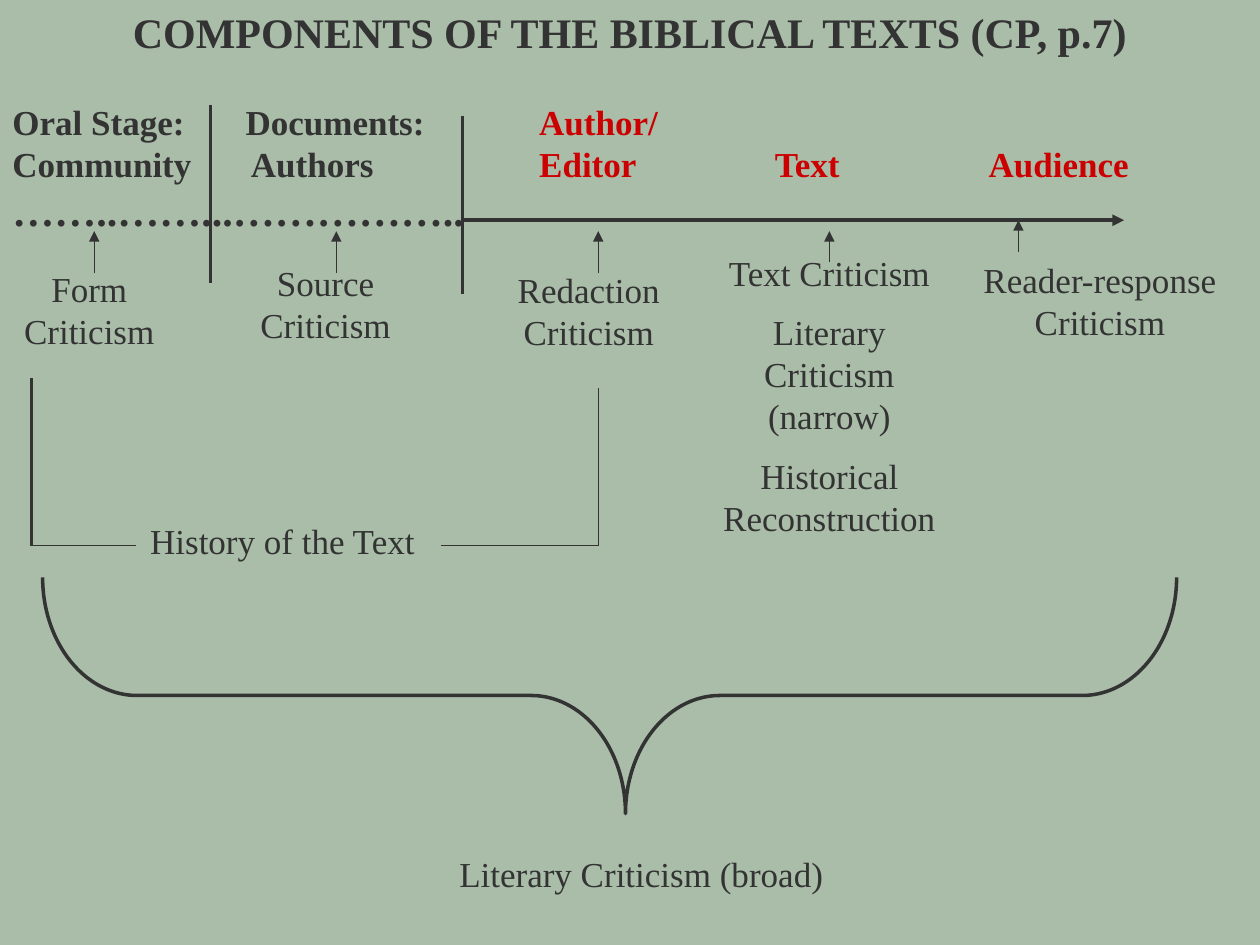
from dataclasses import dataclass

from lxml.etree import SubElement
from pptx import Presentation
from pptx.dml.color import RGBColor
from pptx.enum.shapes import MSO_CONNECTOR as Connector, MSO_SHAPE as Shape
from pptx.enum.text import MSO_ANCHOR as Anchor, MSO_AUTO_SIZE as AutoSize, PP_ALIGN as Align
from pptx.oxml.ns import qn
from pptx.util import Cm, Pt


@dataclass(frozen=True)
class Theme:
    """Colours, type sizes and line widths of the slide."""
    font: str = "Times New Roman"
    sage: RGBColor = RGBColor(0xA9, 0xBD, 0xA9)
    ink: RGBColor = RGBColor(0x33, 0x33, 0x33)
    red: RGBColor = RGBColor(0xCC, 0x00, 0x00)
    heading: Pt = Pt(24)
    body: Pt = Pt(20)
    gap: Pt = Pt(10)
    thin: Pt = Pt(0.75)
    medium: Pt = Pt(1.5)
    strong: Pt = Pt(2)
    axis: Pt = Pt(2.25)


@dataclass(frozen=True)
class Box:
    """A region in centimetres."""
    left: float
    top: float
    width: float
    height: float

    def inner(self, x, y, width, height):
        """Return a box placed relative to this one."""
        return Box(self.left + x, self.top + y, width, height)

    def lengths(self):
        """Return left, top, width and height as lengths."""
        return [Cm(n) for n in (self.left, self.top, self.width, self.height)]


THEME = Theme()


def apply(target, values):
    """Set each named attribute of the target."""
    for name, value in values.items():
        setattr(target, name, value)


def add_run(paragraph, text, color=THEME.ink, size=THEME.body, bold=False):
    """Append a formatted run."""
    run = paragraph.add_run()
    run.text = text
    apply(run.font, {"name": THEME.font, "size": size, "bold": bold})
    run.font.color.rgb = color


def add_label(slide, box, *texts, wrap=True):
    """Add a centred label with one paragraph per text."""
    frame = slide.shapes.add_textbox(*box.lengths()).text_frame
    apply(frame, {"word_wrap": wrap, "vertical_anchor": Anchor.MIDDLE,
                  "auto_size": AutoSize.SHAPE_TO_FIT_TEXT})
    for index, text in enumerate(texts):
        paragraph = frame.add_paragraph() if index else frame.paragraphs[0]
        apply(paragraph, {"alignment": Align.CENTER, "space_before": THEME.gap if index else Pt(0)})
        add_run(paragraph, text)


def add_line(slide, box, start, end, width=THEME.thin, arrow=False):
    """Draw a line between two points relative to the box."""
    points = [Cm(n) for x, y in (start, end) for n in (box.left + x, box.top + y)]
    connector = slide.shapes.add_connector(Connector.STRAIGHT, *points)
    connector.line.width = width
    connector.line.color.rgb = THEME.ink
    if arrow:
        SubElement(connector.line._get_or_add_ln(), qn("a:tailEnd"), type="triangle")
    SubElement(connector._element.spPr, qn("a:effectLst"))


def build_title(slide, box):
    """Place and format the slide title."""
    title = slide.shapes.title
    apply(title, dict(zip(("left", "top", "width", "height"), box.lengths())))
    apply(title.text_frame, {"word_wrap": True, "vertical_anchor": Anchor.MIDDLE,
                             "auto_size": AutoSize.NONE})
    paragraph = title.text_frame.paragraphs[0]
    paragraph.alignment = Align.CENTER
    add_run(paragraph, "COMPONENTS OF THE BIBLICAL TEXTS (CP, p.7)",
            size=THEME.heading, bold=True)


def build_timeline(slide, box):
    """Draw the stages, their dividers and the time axis."""
    rows = [
        ((4.7, 10.62), THEME.body, "Oral Stage:\tDocuments:", "\tAuthor/"),
        ((4.81, 10.62, 15.37, 19.68), THEME.body, "Community\tAuthors", "\tEditor\tText\tAudience"),
        ((), THEME.heading, "……..……...……………..", ""),
    ]
    frame = slide.shapes.add_textbox(*box.inner(0, 0, box.width, 2.97).lengths()).text_frame
    apply(frame, {"word_wrap": True, "auto_size": AutoSize.SHAPE_TO_FIT_TEXT})
    for index, (stops, size, early, late) in enumerate(rows):
        paragraph = frame.add_paragraph() if index else frame.paragraphs[0]
        if stops:
            tabs = SubElement(paragraph._p.get_or_add_pPr(), qn("a:tabLst"))
            for stop in stops:
                SubElement(tabs, qn("a:tab"), pos=str(int(Cm(stop))), algn="l")
        for text, color in ((early, THEME.ink), (late, THEME.red)):
            if text:
                add_run(paragraph, text, color, size, bold=True)
    add_line(slide, box, (9.32, 2.54), (22.66, 2.54), THEME.axis, arrow=True)
    add_line(slide, box, (4.24, 0.21), (4.24, 3.81), THEME.medium)
    add_line(slide, box, (9.32, 0.43), (9.32, 4.02), THEME.strong)


def build_methods(slide, box):
    """Place each kind of criticism under its arrow."""
    methods = [
        (1.9, 1.06, 0.22, (0, 0.82, 3.6, 1.95), ["Form Criticism"]),
        (6.78, 1.06, 0.22, (4.04, 0.71, 5.05, 1.95), ["Source Criticism"]),
        (12.06, 1.06, 0.22, (9.32, 0.84, 5.1, 1.95), ["Redaction Criticism"]),
        (16.72, 0.85, 0.22, (14.18, 0.43, 5.08, 6.18),
         ["Text Criticism", "Literary Criticism (narrow)", "Historical Reconstruction"]),
        (20.53, 0.64, 0, (18.95, 0.64, 6.45, 1.95), ["Reader-response Criticism"]),
    ]
    for x, foot, tip, place, names in methods:
        add_line(slide, box, (x, foot), (x, tip), arrow=True)
        add_label(slide, box.inner(*place), *names)


def build_history(slide, box):
    """Bracket the methods that trace the history of the text."""
    right, bottom = box.width, box.height
    add_line(slide, box, (0, 0), (0, bottom), THEME.medium)
    add_line(slide, box, (right, 0.21), (right, bottom))
    add_line(slide, box, (0, bottom), (2.11, bottom))
    add_line(slide, box, (right, bottom), (8.25, bottom))
    add_label(slide, box.inner(2.11, bottom - 0.64, 5.89, 1.09), "History of the Text", wrap=False)


def build_broad(slide, box):
    """Gather all methods under one wide brace."""
    depth = 4.76
    upright = box.inner((box.width - depth) / 2, (depth - box.width) / 2, depth, box.width)
    brace = slide.shapes.add_shape(Shape.LEFT_BRACE, *upright.lengths())
    brace.rotation = 270
    brace.adjustments[0], brace.adjustments[1] = 0.4, 0.514
    brace.shadow.inherit = False
    brace.fill.background()
    brace.line.width = THEME.strong
    brace.line.color.rgb = THEME.ink
    add_label(slide, box.inner(8.11, box.height - 1.09, 7.92, 1.09), "Literary Criticism (broad)")


def main():
    """Build and save the slide."""
    deck = Presentation()
    apply(deck, {"slide_width": Cm(25.4), "slide_height": Cm(19.05)})
    slide = deck.slides.add_slide(deck.slide_layouts.get_by_name("Title Only"))
    slide.background.fill.solid()
    slide.background.fill.fore_color.rgb = THEME.sage
    build_title(slide, Box(1.9, 0, 21.6, 1.27))
    build_timeline(slide, Box(0, 1.9, 25.4, 4.02))
    build_methods(slide, Box(0, 4.44, 25.4, 6.61))
    build_history(slide, Box(0.64, 7.62, 11.42, 3.38))
    build_broad(slide, Box(0.86, 11.64, 22.86, 6.52))
    deck.save("out.pptx")


if __name__ == "__main__":
    main()
